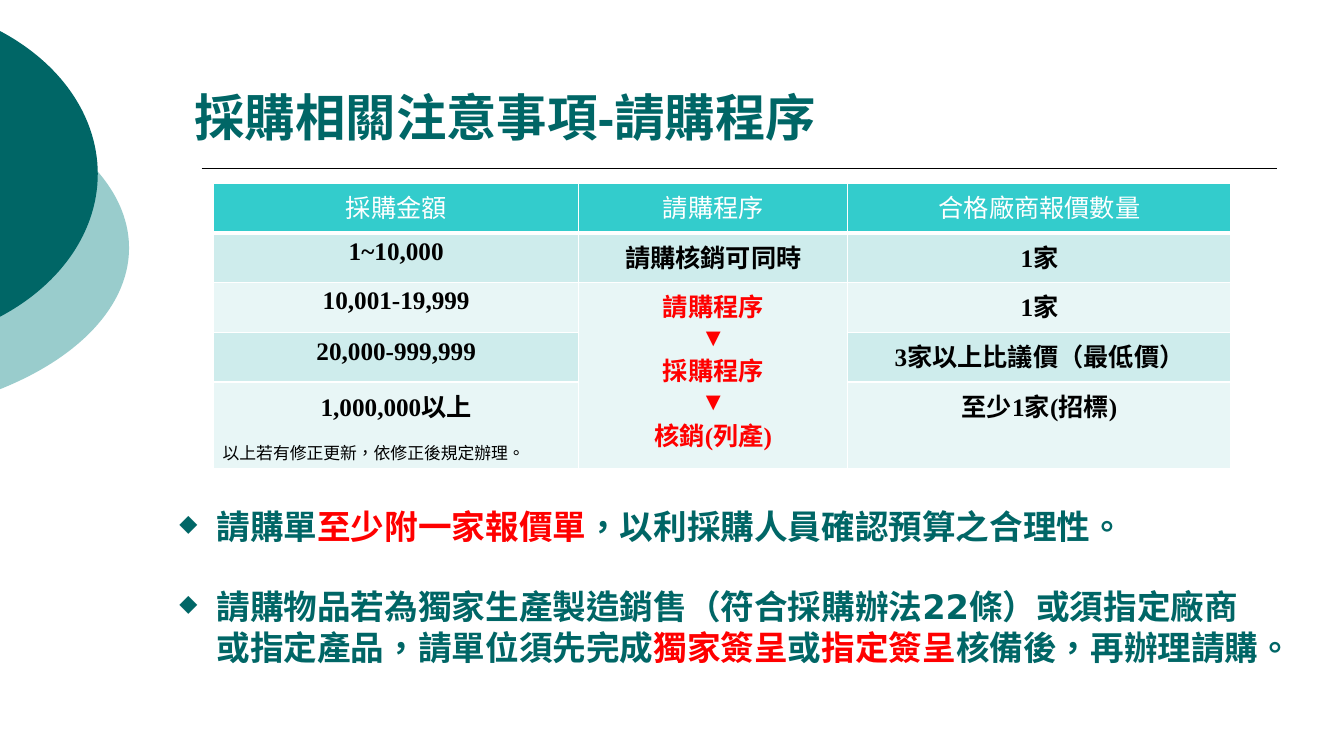
import lxml.etree
import pptx
import pptx.dml.color
import pptx.enum.lang
import pptx.enum.shapes
import pptx.enum.text
import pptx.oxml.ns
import pptx.util

Inches = pptx.util.Inches
Pt = pptx.util.Pt
RGBColor = pptx.dml.color.RGBColor
Anchor = pptx.enum.text.MSO_ANCHOR
qn = pptx.oxml.ns.qn

TEAL = RGBColor(0x00, 0x66, 0x66)
PALE = RGBColor(0x99, 0xCC, 0xCC)
HEAD = RGBColor(0x33, 0xCC, 0xCC)
BANDS = [RGBColor(0xCE, 0xEC, 0xEC), RGBColor(0xE8, 0xF6, 0xF6)]
WHITE = RGBColor(0xFF, 0xFF, 0xFF)
BLACK = RGBColor(0x00, 0x00, 0x00)
RED = RGBColor(0xFF, 0x00, 0x00)

SANS = "Noto Sans CJK JP"
SERIF = "Times New Roman"

ROWS = [
    ["採購金額", "請購程序", "合格廠商報價數量"],
    ["1~10,000", "請購核銷可同時", "1家"],
    ["10,001-19,999", "請購程序\n▼\n採購程序\n▼\n核銷(列產)", "1家"],
    ["20,000-999,999", "", "3家以上比議價（最低價）"],
    ["1,000,000以上", "", "至少1家(招標)"],
]
WIDTHS = [3.62, 2.67, 3.8]
HEIGHTS = [0.49, 0.49, 0.5, 0.49, 0.86]
POINTS = [
    [("請購單", TEAL), ("至少附一家報價單", RED),
     ("，以利採購人員確認預算之合理性。", TEAL)],
    [("請購物品若為獨家生產製造銷售（符合採購辦法22條）或須指定廠商或指定產品，請單位須先完成", TEAL),
     ("獨家簽呈", RED), ("或", TEAL), ("指定簽呈", RED),
     ("核備後，再辦理請購。", TEAL)],
]


def style(font, name, size, bold, color=None):
    font.name = name
    font.size = Pt(size)
    font.bold = bold
    font.language_id = pptx.enum.lang.MSO_LANGUAGE_ID.TRADITIONAL_CHINESE
    if color is not None:
        font.color.rgb = color


def add_oval(slide, color, left, top, width, height):
    oval = slide.shapes.add_shape(
        pptx.enum.shapes.MSO_SHAPE.OVAL,
        Inches(left), Inches(top), Inches(width), Inches(height))
    oval.shadow.inherit = False
    oval.fill.solid()
    oval.fill.fore_color.rgb = color
    oval.line.fill.background()


def add_rule(slide):
    rule = slide.shapes.add_connector(
        pptx.enum.shapes.MSO_CONNECTOR.STRAIGHT,
        Inches(2), Inches(1.67), Inches(12.67), Inches(1.67))
    rule.line.color.rgb = BLACK
    rule.line.width = Pt(1)
    lxml.etree.SubElement(rule._element.spPr, qn("a:effectLst"))


def add_box(slide, left, top, width, height, anchor=Anchor.TOP):
    box = slide.shapes.add_textbox(
        Inches(left), Inches(top), Inches(width), Inches(height))
    frame = box.text_frame
    frame.word_wrap = True
    frame.vertical_anchor = anchor
    return frame


def add_label(frame, text, *look):
    para = frame.paragraphs[0]
    para.text = text
    style(para.font, *look)


def add_border(cell, side, width):
    props = cell._tc.get_or_add_tcPr()
    line = lxml.etree.SubElement(props, qn("a:ln" + side), w=str(Pt(width)))
    fill = lxml.etree.SubElement(line, qn("a:solidFill"))
    lxml.etree.SubElement(fill, qn("a:srgbClr"), val=str(WHITE))


def fill_cell(cell, text, row, col):
    for side in "LRTB":
        add_border(cell, side, 3 if (row, side) == (0, "B") else 1)
    cell.fill.solid()
    cell.fill.fore_color.rgb = BANDS[(row - 1) % 2] if row else HEAD
    if not text:
        return
    cell.text = text
    color = RED if (row, col) == (2, 1) else BLACK
    look = (SERIF, 18, True, color) if row else (SANS, 18, False, WHITE)
    for para in cell.text_frame.paragraphs:
        para.alignment = pptx.enum.text.PP_ALIGN.CENTER
        style(para.font, *look)


def add_grid(slide):
    table = slide.shapes.add_table(
        len(ROWS), len(WIDTHS), Inches(2.12), Inches(1.82),
        Inches(sum(WIDTHS)), Inches(sum(HEIGHTS))).table
    for column, width in zip(table.columns, WIDTHS):
        column.width = Inches(width)
    for row, height in zip(table.rows, HEIGHTS):
        row.height = Inches(height)
    for row, texts in enumerate(ROWS):
        for col, text in enumerate(texts):
            fill_cell(table.cell(row, col), text, row, col)
    table.cell(2, 1).merge(table.cell(4, 1))


def add_points(slide):
    frame = add_box(slide, 1.68, 4.97, 10.97, 1.72)
    for index, parts in enumerate(POINTS):
        para = frame.add_paragraph() if index else frame.paragraphs[0]
        para.space_before = Pt(28.5 * index)
        style(para.font, "DejaVu Sans", 24, True)
        props = para._p.get_or_add_pPr()
        props.set("marL", str(Inches(0.37)))
        props.set("indent", str(Inches(-0.37)))
        last = props.find(qn("a:defRPr"))
        last.addprevious(lxml.etree.Element(qn("a:buSzPct"), val="70000"))
        last.addprevious(lxml.etree.Element(qn("a:buChar"), char="◆"))
        for text, color in parts:
            run = para.add_run()
            run.text = text
            run.font.color.rgb = color


def main():
    deck = pptx.Presentation()
    deck.slide_width = Inches(13.33)
    deck.slide_height = Inches(7.5)
    slide = deck.slides.add_slide(deck.slide_layouts[6])
    add_oval(slide, PALE, -4.72, 0.75, 6, 3.42)
    add_oval(slide, TEAL, -3.54, 0, 4.51, 3.45)
    add_rule(slide)
    title = add_box(slide, 1.83, 0.25, 8, 1.25, Anchor.BOTTOM)
    add_label(title, "採購相關注意事項-請購程序", "Arial", 36, True, TEAL)
    add_grid(slide)
    add_points(slide)
    note = add_box(slide, 2.11, 4.34, 4.68, 0.3)
    add_label(note, "以上若有修正更新，依修正後規定辦理。", SANS, 12, False, BLACK)
    deck.save("out.pptx")


if __name__ == "__main__":
    main()
